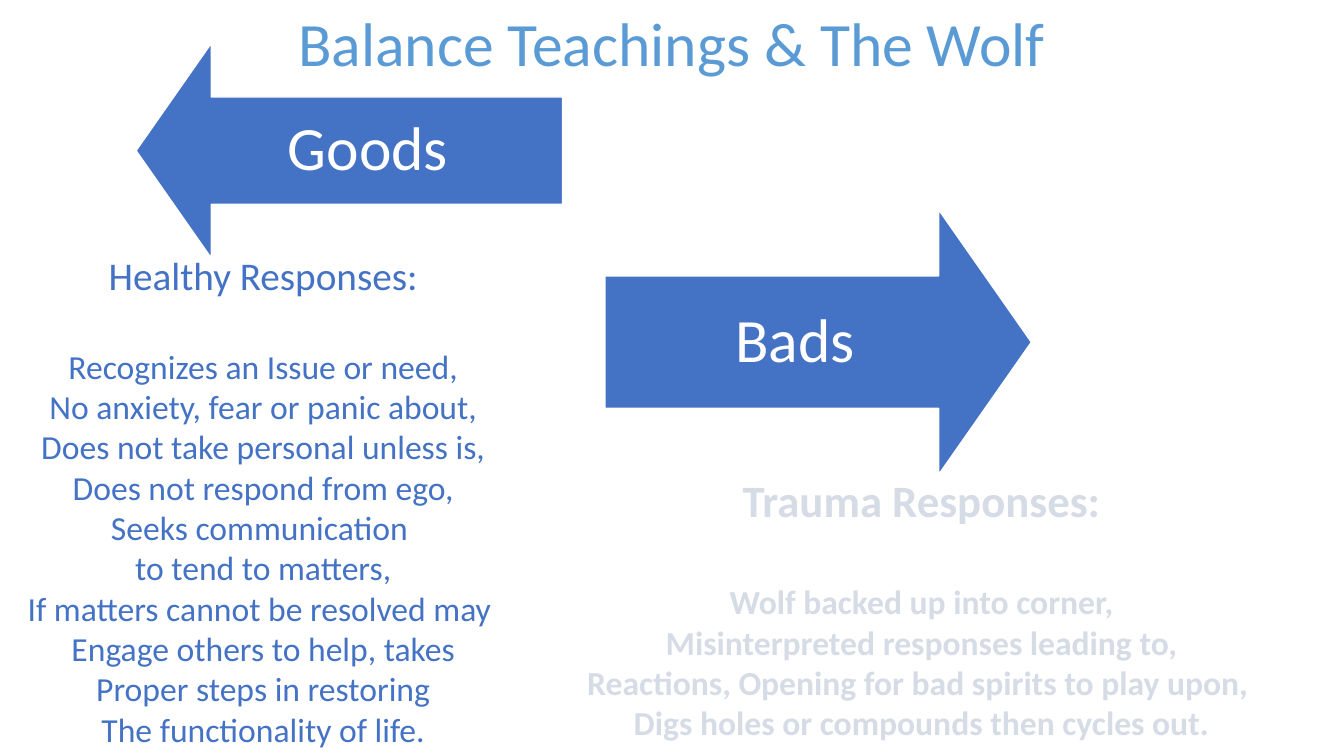
from dataclasses import dataclass

from pptx import Presentation
from pptx.dml.color import RGBColor
from pptx.enum import shapes, text
from pptx.util import Inches, Pt

COLORS = {"title": "5B9BD5", "blue": "4472C4", "pale": "D6DCE5", "white": "FFFFFF"}
FONT = "Calibri"
BODY_SIZE = 24


@dataclass
class Arrow:
    label: str
    kind: shapes.MSO_SHAPE
    left: float
    top: float
    width: float
    height: float


@dataclass
class Responses:
    heading: str
    lines: list[str]
    heading_size: int
    heading_gap: int
    color: str
    bold: bool
    left: float
    top: float
    width: float
    height: float


ARROWS = [
    Arrow("Goods", shapes.MSO_SHAPE.LEFT_ARROW, 1.35, 0.43, 4.23, 2.13),
    Arrow("Bads", shapes.MSO_SHAPE.RIGHT_ARROW, 6, 2.08, 4.23, 2.63),
]

RESPONSES = [
    Responses(
        "Trauma Responses:",
        [
            "Wolf backed up into corner,",
            " Misinterpreted responses leading to, ",
            "Reactions, Opening for bad spirits to play upon, ",
            "Digs holes or compounds then cycles out.",
        ],
        32, 39, "pale", True, 5.69, 4.64, 6.9, 2.79,
    ),
    Responses(
        "Healthy Responses:",
        [
            "Recognizes an Issue or need,",
            "No anxiety, fear or panic about,",
            "Does not take personal unless is,",
            "Does not respond from ego,",
            "Seeks communication ",
            "to tend to matters,",
            "If matters cannot be resolved may ",
            "Engage others to help, takes",
            "Proper steps in restoring",
            "The functionality of life.",
        ],
        28, 34, "blue", False, 0.15, 2.44, 4.92, 5.06,
    ),
]


def rgb(name: str) -> RGBColor:
    return RGBColor.from_string(COLORS[name])


def write_centered(paragraph, words: str, size: int, color: str, bold: bool = False) -> None:
    paragraph.alignment = text.PP_ALIGN.CENTER
    run = paragraph.add_run()
    run.text = words
    run.font.name = FONT
    run.font.size = Pt(size)
    run.font.bold = bold
    run.font.color.rgb = rgb(color)


def add_title(slide, words: str) -> None:
    title = slide.shapes.title
    title.left, title.top = Inches(2.82), Inches(0)
    title.width, title.height = Inches(7.69), Inches(0.84)
    frame = title.text_frame
    frame.word_wrap = False
    frame.auto_size = text.MSO_AUTO_SIZE.NONE
    frame.vertical_anchor = text.MSO_ANCHOR.TOP
    frame.paragraphs[0].line_spacing = 1.0
    write_centered(frame.paragraphs[0], words, 44, "title")


def add_arrow(slide, arrow: Arrow) -> None:
    shape = slide.shapes.add_shape(
        arrow.kind, Inches(arrow.left), Inches(arrow.top), Inches(arrow.width), Inches(arrow.height)
    )
    shape.shadow.inherit = False
    shape.adjustments[0] = 0.5
    shape.adjustments[1] = 0.35
    shape.fill.solid()
    shape.fill.fore_color.rgb = rgb("blue")
    shape.line.color.rgb = rgb("white")
    shape.line.width = Pt(1)
    frame = shape.text_frame
    frame.word_wrap = True
    frame.vertical_anchor = text.MSO_ANCHOR.MIDDLE
    frame.margin_left = frame.margin_right = Inches(0.34)
    frame.margin_top = frame.margin_bottom = Inches(0.34)
    frame.paragraphs[0].line_spacing = 0.9
    write_centered(frame.paragraphs[0], arrow.label, 44, "white")


def add_responses(slide, block: Responses) -> None:
    box = slide.shapes.add_textbox(
        Inches(block.left), Inches(block.top), Inches(block.width), Inches(block.height)
    )
    frame = box.text_frame
    frame.word_wrap = False
    heading = frame.paragraphs[0]
    heading.space_after = Pt(block.heading_gap)
    write_centered(heading, block.heading, block.heading_size, block.color, block.bold)
    for line in block.lines:
        write_centered(frame.add_paragraph(), line, BODY_SIZE, block.color, block.bold)


def main() -> None:
    presentation = Presentation()
    presentation.slide_width, presentation.slide_height = Inches(13.33), Inches(7.5)
    slide = presentation.slides.add_slide(presentation.slide_layouts[5])
    add_title(slide, "Balance Teachings & The Wolf")
    for arrow in ARROWS:
        add_arrow(slide, arrow)
    for block in RESPONSES:
        add_responses(slide, block)
    presentation.save("out.pptx")


if __name__ == "__main__":
    main()
